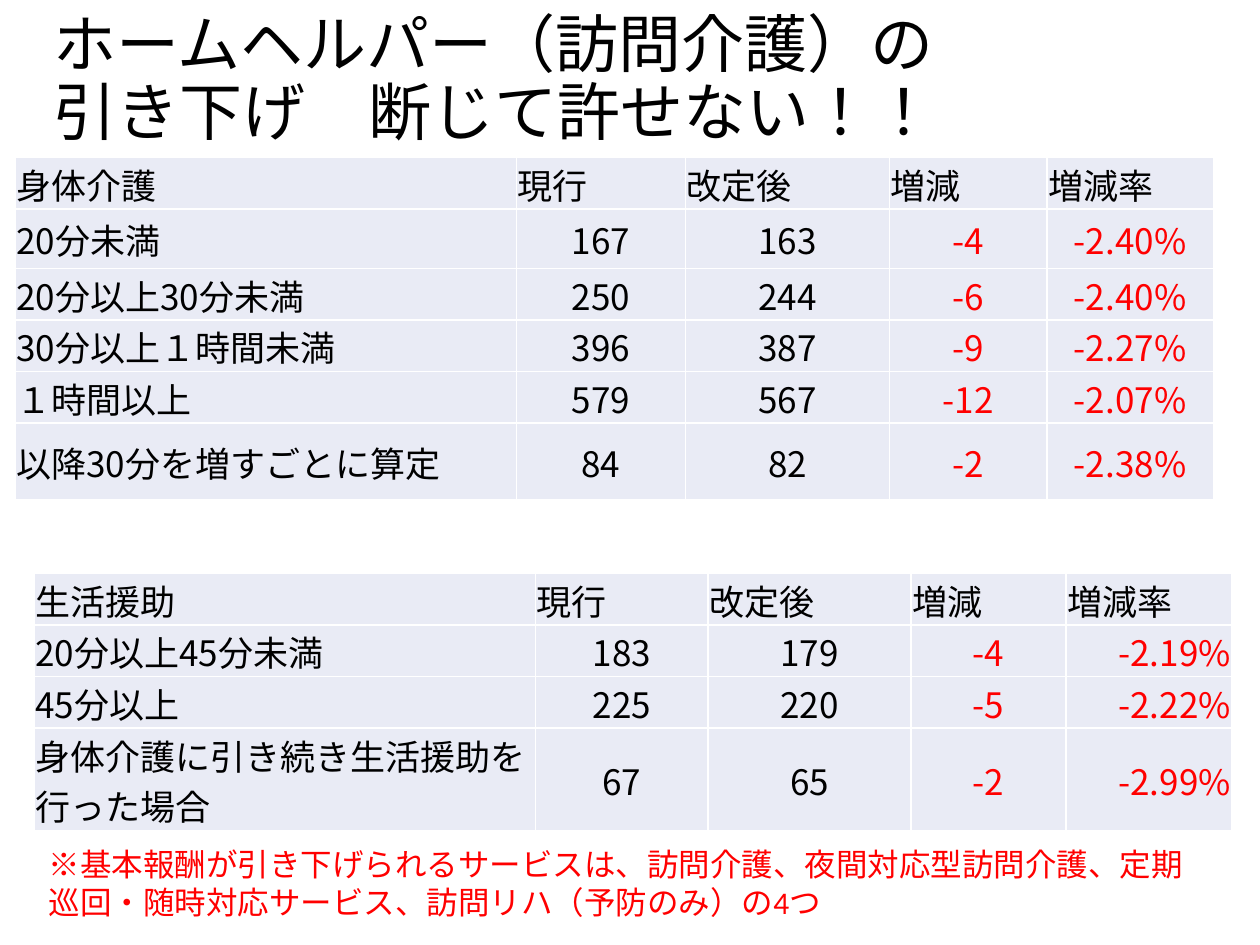
"""Build a slide on the cuts to home-helper care fees."""
import lxml.etree
import pptx
import pptx.dml.color
import pptx.enum.text
import pptx.oxml.ns
import pptx.util

Inches = pptx.util.Inches
ALIGN = pptx.enum.text.PP_ALIGN
MIDDLE = pptx.enum.text.MSO_ANCHOR.MIDDLE
CJK = "Noto Sans CJK JP"


def rgb(value):
    return pptx.dml.color.RGBColor.from_string(value)


def write(p, text, size, name, color, align=ALIGN.LEFT):
    p.text = text
    p.alignment = align
    p.font.size = pptx.util.Pt(size)
    p.font.name = name
    p.font.color.rgb = rgb(color)
    p.font.language_id = pptx.enum.lang.MSO_LANGUAGE_ID.JAPANESE
    props = p._p.pPr.find(pptx.oxml.ns.qn("a:defRPr"))
    lxml.etree.SubElement(props, pptx.oxml.ns.qn("a:ea"), typeface=name)


prs = pptx.Presentation()
prs.slide_width, prs.slide_height = Inches(10), Inches(7.5)
s = prs.slides.add_slide(prs.slide_layouts[6])

title = s.shapes.add_textbox(Inches(0.33), Inches(0.13), Inches(9.07), Inches(1.03))
tf = title.text_frame
tf.word_wrap = True
tf.vertical_anchor = MIDDLE
p = tf.paragraphs[0]
write(p, "ホームヘルパー（訪問介護）の\v引き下げ　断じて許せない！！", 36, CJK, "000000")
p.line_spacing = 0.9

headings = ["現行", "改定後", "増減", "増減率"]
body_care = [
    ["身体介護", *headings],
    ["20分未満", "167", "163", "-4", "-2.40%"],
    ["20分以上30分未満", "250", "244", "-6", "-2.40%"],
    ["30分以上１時間未満", "396", "387", "-9", "-2.27%"],
    ["１時間以上", "579", "567", "-12", "-2.07%"],
    ["以降30分を増すごとに算定", "84", "82", "-2", "-2.38%"],
]
living_support = [
    ["生活援助", *headings],
    ["20分以上45分未満", "183", "179", "-4", "-2.19%"],
    ["45分以上", "225", "220", "-5", "-2.22%"],
    ["身体介護に引き続き生活援助を行った場合", "67", "65", "-2", "-2.99%"],
]
tables = [
    (body_care, 0.12, 1.25, [3.98, 1.34, 1.62, 1.25, 1.32],
     [0.41, 0.47, 0.41, 0.41, 0.41, 0.61], ALIGN.CENTER),
    (living_support, 0.27, 4.55, [3.98, 1.37, 1.61, 1.23, 1.32],
     [0.41, 0.41, 0.41, 0.81], ALIGN.RIGHT),
]
for data, left, top, widths, heights, rate_align in tables:
    table = s.shapes.add_table(
        len(data), len(widths), Inches(left), Inches(top),
        Inches(sum(widths)), Inches(sum(heights))).table
    table.first_row = False
    table.horz_banding = False
    for column, width in zip(table.columns, widths):
        column.width = Inches(width)
    for row, height in zip(table.rows, heights):
        row.height = Inches(height)
    aligns = [ALIGN.LEFT, ALIGN.CENTER, ALIGN.CENTER, ALIGN.CENTER, rate_align]
    for i, values in enumerate(data):
        for j, value in enumerate(values):
            cell = table.cell(i, j)
            cell.fill.solid()
            cell.fill.fore_color.rgb = rgb("E9EBF5")
            cell.vertical_anchor = MIDDLE
            cell.margin_left = cell.margin_right = cell.margin_top = Inches(0.01)
            cell.margin_bottom = 0
            color = "FF0000" if i > 0 and j > 2 else "000000"
            align = aligns[j] if i > 0 else ALIGN.LEFT
            write(cell.text_frame.paragraphs[0], value, 20, CJK, color, align)

note = s.shapes.add_textbox(Inches(0.29), Inches(6.66), Inches(9.32), Inches(0.71))
tf = note.text_frame
tf.word_wrap = True
tf.auto_size = pptx.enum.text.MSO_AUTO_SIZE.SHAPE_TO_FIT_TEXT
write(tf.paragraphs[0],
      "※基本報酬が引き下げられるサービスは、訪問介護、夜間対応型訪問介護、"
      "定期巡回・随時対応サービス、訪問リハ（予防のみ）の4つ",
      18, "Calibri", "FF0000")

prs.save("out.pptx")
